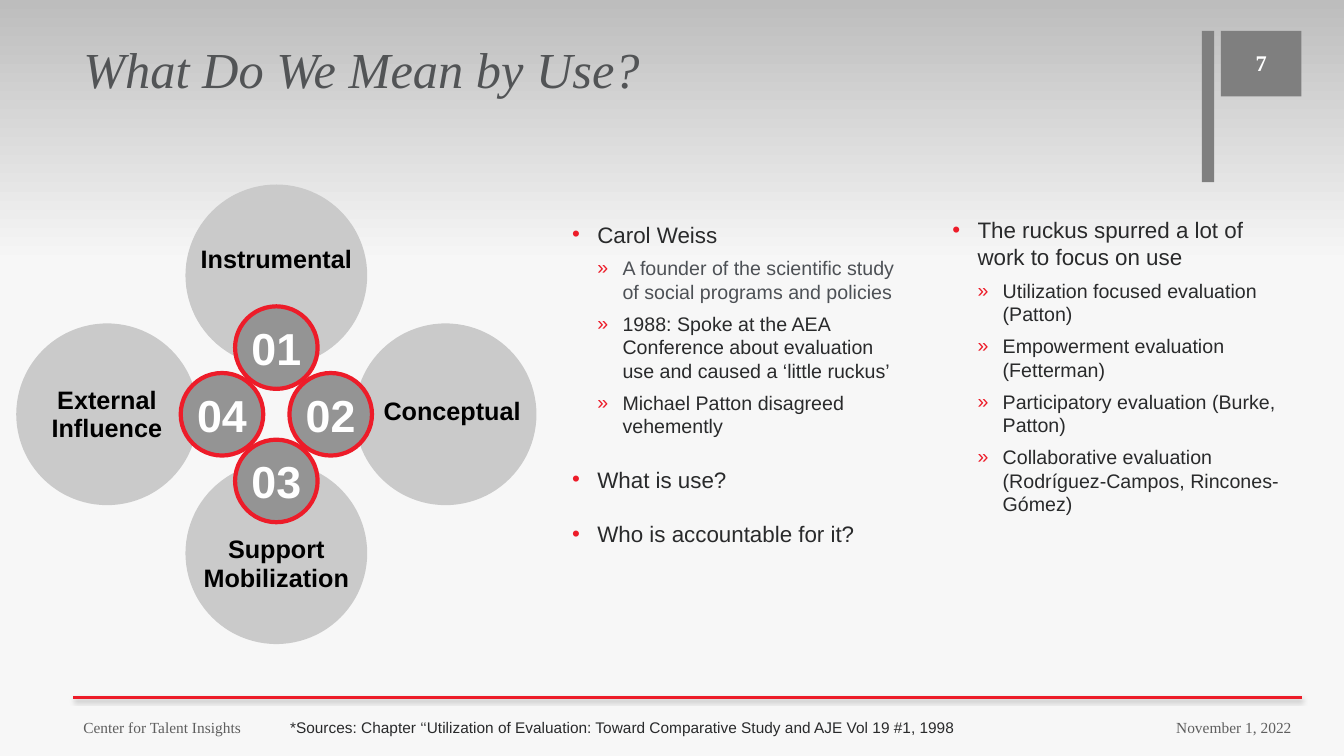
from lxml.etree import SubElement
from pptx import Presentation
from pptx.dml.color import RGBColor
from pptx.enum.shapes import MSO_CONNECTOR, MSO_SHAPE
from pptx.enum.text import MSO_ANCHOR, PP_ALIGN
from pptx.oxml import parse_xml
from pptx.oxml.ns import nsdecls, qn
from pptx.util import Cm, Pt

RED = RGBColor(0xED, 0x1C, 0x29)
WHITE = RGBColor(0xFF, 0xFF, 0xFF)
BLACK = RGBColor(0x00, 0x00, 0x00)
INK = RGBColor(0x29, 0x2A, 0x2B)
SOFT_INK = RGBColor(0x4D, 0x51, 0x56)
TITLE_GREY = RGBColor(0x52, 0x54, 0x56)
FOOTER_GREY = RGBColor(0x5E, 0x5E, 0x5E)
TAB_GREY = RGBColor(0x7F, 0x7F, 0x7F)
PETAL_GREY = RGBColor(0xCA, 0xCA, 0xCA)
BADGE_GREY = RGBColor(0x94, 0x94, 0x94)
SANS, SERIF = "Arial", "Times New Roman"
WIDTH, HEIGHT = 33.87, 19.05

# Name, number, direction from the centre, label offset and label size
USES = [
    ("Instrumental", "01", (0, -1), (0, -3.87), (4.55, 1)),
    ("Conceptual", "02", (1, 0), (4.43, -0.04), (4.14, 1)),
    ("Support Mobilization", "03", (0, 1), (0, 3.8), (4.32, 1.73)),
    ("External Influence", "04", (-1, 0), (-4.27, 0.03), (3.4, 1.73)),
]
# Level, wording, colour
HISTORY = [
    (0, "Carol Weiss", INK),
    (1, "A founder of the scientific study of social programs and policies", SOFT_INK),
    (1, "1988: Spoke at the AEA Conference about evaluation use and caused a ‘little ruckus’", INK),
    (1, "Michael Patton disagreed vehemently", INK),
    (0, "What is use?", INK),
    (0, "Who is accountable for it?", INK),
]
APPROACHES = [
    (0, "The ruckus spurred a lot of work to focus on use", INK),
    (1, "Utilization focused evaluation (Patton)", INK),
    (1, "Empowerment evaluation (Fetterman)", INK),
    (1, "Participatory evaluation (Burke, Patton)", INK),
    (1, "Collaborative evaluation (Rodríguez-Campos, Rincones-Gómez)", INK),
]


def add_block(page, kind, left, top, width, height, fill=None):
    block = page.shapes.add_shape(kind, Cm(left), Cm(top), Cm(width), Cm(height))
    block.shadow.inherit = False
    block.line.fill.background()
    if fill is not None:
        block.fill.solid()
        block.fill.fore_color.rgb = fill
    return block


def add_disc(page, centre_x, centre_y, size, fill):
    return add_block(page, MSO_SHAPE.OVAL, centre_x - size / 2, centre_y - size / 2,
                     size, size, fill)


def style(para, size, face, color, align=PP_ALIGN.LEFT, bold=False, italic=False):
    para.alignment = align
    for span in para.runs:
        span.font.size, span.font.name = Pt(size), face
        span.font.bold, span.font.italic = bold, italic
        span.font.color.rgb = color


def add_text(page, box, text, size, face, color, anchor=MSO_ANCHOR.MIDDLE, **looks):
    frame = page.shapes.add_textbox(*(Cm(length) for length in box)).text_frame
    frame.word_wrap = True
    frame.vertical_anchor = anchor
    frame.text = text
    style(frame.paragraphs[0], size, face, color, **looks)
    return frame.paragraphs[0]


def add_backdrop(page):
    backdrop = add_block(page, MSO_SHAPE.RECTANGLE, 0, 0, WIDTH, HEIGHT)
    backdrop.fill.gradient()
    gradient = backdrop.fill._xPr.find(qn("a:gradFill"))
    stops = gradient.find(qn("a:gsLst"))
    for stop in list(stops):
        stops.remove(stop)
    for position, color in ((0, "BDBDBD"), (35, "F7F7F7"), (100, "F8F8F8")):
        stop = SubElement(stops, qn("a:gs"), pos=str(position * 1000))
        SubElement(stop, qn("a:srgbClr"), val=color)
    gradient.find(qn("a:lin")).set("ang", "5400000")


def add_header(page, left, top, width):
    add_text(page, (left, top + 0.05, 28, 3.66), "What Do We Mean by Use?", 36, SERIF,
             TITLE_GREY, anchor=MSO_ANCHOR.TOP, italic=True)
    # Page number tab on the right
    tab_left = left + width - 2.03
    add_block(page, MSO_SHAPE.RECTANGLE, tab_left, top, 2.03, 1.65, TAB_GREY)
    add_block(page, MSO_SHAPE.RECTANGLE, tab_left - 0.48, top, 0.31, 3.81, TAB_GREY)
    add_text(page, (tab_left, top + 0.28, 2.03, 1.02), "7", 16, SERIF, WHITE,
             align=PP_ALIGN.CENTER, bold=True)


def add_footer(page, left, top, width):
    rule = page.shapes.add_connector(MSO_CONNECTOR.STRAIGHT, Cm(left), Cm(top),
                                     Cm(left + width), Cm(top))
    rule.line.color.rgb = RED
    rule.line.width = Pt(2)
    rule._element.spPr.append(parse_xml(
        f'<a:effectLst {nsdecls("a")}><a:outerShdw blurRad="{Pt(3.1)}" dist="{Pt(1.6)}" '
        'dir="5400000" rotWithShape="0"><a:srgbClr val="000000"><a:alpha val="38000"/>'
        '</a:srgbClr></a:outerShdw></a:effectLst>'))
    row = top + 0.25
    add_text(page, (left, row, 5.2, 1.02), "Center for Talent Insights", 11, SERIF,
             FOOTER_GREY)
    add_text(page, (left + 5.21, row, 18.14, 1.02),
             "*Sources: Chapter ‘‘Utilization of Evaluation: Toward Comparative Study "
             "and AJE Vol 19 #1, 1998", 11, SANS, INK)
    add_text(page, (left + width - 7.9, row, 7.9, 1.02), "November 1, 2022", 11, SERIF,
             FOOTER_GREY, align=PP_ALIGN.RIGHT)


def add_wheel(page, left, top, width, height):
    middle_x, middle_y = left + width / 2, top + height / 2
    petal, badge = 4.58, 2.08
    reach_x, reach_y = (width - petal) / 2, (height - petal) / 2
    # Petals with their labels
    for name, _, (step_x, step_y), (shift_x, shift_y), (wide, high) in USES:
        add_disc(page, middle_x + step_x * reach_x, middle_y + step_y * reach_y,
                 petal, PETAL_GREY)
        box = (middle_x + shift_x - wide / 2, middle_y + shift_y - high / 2, wide, high)
        para = add_text(page, box, name, 18, SANS, BLACK, anchor=MSO_ANCHOR.TOP,
                        align=PP_ALIGN.CENTER, bold=True)
        para.line_spacing = 0.95
    # Numbered badges around the centre
    for _, number, (step_x, step_y), _, _ in USES:
        disc = add_disc(page, middle_x + step_x * 1.37, middle_y + step_y * 1.68,
                        badge, BADGE_GREY)
        disc.line.color.rgb = RED
        disc.line.width = Pt(3)
        frame = disc.text_frame
        frame.margin_left = frame.margin_right = frame.margin_top = frame.margin_bottom = 0
        frame.word_wrap = True
        frame.vertical_anchor = MSO_ANCHOR.MIDDLE
        frame.text = number
        style(frame.paragraphs[0], 32, SANS, WHITE, PP_ALIGN.CENTER, bold=True)


def add_bullets(page, items, left, top, width, height):
    frame = page.shapes.add_textbox(Cm(left), Cm(top), Cm(width), Cm(height)).text_frame
    frame.word_wrap = True
    for index, (level, text, color) in enumerate(items):
        para = frame.add_paragraph() if index else frame.paragraphs[0]
        para.text = text
        para.level = level
        props = para._p.get_or_add_pPr()
        props.set("marL", str(Cm(0.635 * (level + 1))))
        props.set("indent", str(-Cm(0.635)))
        bullet_color = SubElement(props, qn("a:buClr"))
        SubElement(bullet_color, qn("a:srgbClr"), val=str(RED))
        SubElement(props, qn("a:buFont"), typeface=SANS)
        SubElement(props, qn("a:buChar"), char="»" if level else "•")
        if index:
            para.space_before = Pt(6 if level else 20)
        style(para, 14 if level else 16, SANS, color)


def main():
    deck = Presentation()
    deck.slide_width, deck.slide_height = Cm(WIDTH), Cm(HEIGHT)
    page = deck.slides.add_slide(deck.slide_layouts[6])
    add_backdrop(page)
    add_header(page, left=1.85, top=0.78, width=30.95)
    add_wheel(page, left=0.41, top=4.65, width=13.11, height=11.58)
    add_bullets(page, HISTORY, left=14.17, top=5.44, width=8.89, height=11.68)
    add_bullets(page, APPROACHES, left=23.75, top=5.33, width=8.89, height=11.68)
    add_footer(page, left=1.85, top=17.58, width=30.95)
    deck.save("out.pptx")


if __name__ == "__main__":
    main()
